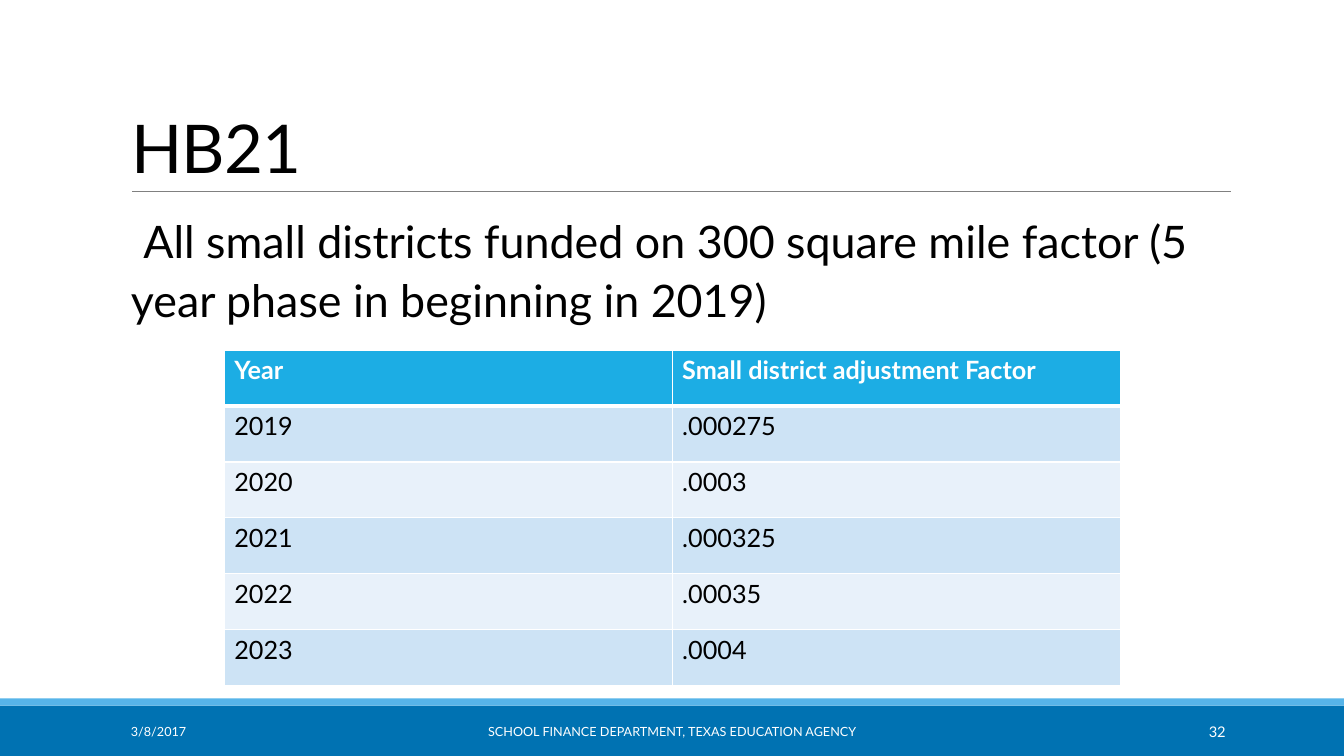
from lxml.etree import SubElement
from pptx import Presentation
from pptx.dml.color import RGBColor
from pptx.enum.shapes import MSO_CONNECTOR, MSO_SHAPE
from pptx.enum.text import MSO_ANCHOR, PP_ALIGN
from pptx.oxml.ns import qn
from pptx.util import Cm, Pt

# Content
TITLE = "HB21"
STATEMENT = ("All small districts funded on 300 square mile factor "
             "(5 year phase in beginning in 2019)")
FACTORS = [
    ("Year", "Small district adjustment Factor"),
    ("2019", ".000275"),
    ("2020", ".0003"),
    ("2021", ".000325"),
    ("2022", ".00035"),
    ("2023", ".0004"),
]
# text, left, width, size, alignment
FOOTERS = [
    ("3/8/2017", 3.05, 6.86, 9, PP_ALIGN.LEFT),
    ("SCHOOL FINANCE DEPARTMENT, TEXAS EDUCATION AGENCY", 10.24, 13.39, 9, PP_ALIGN.CENTER),
    ("32", 27.51, 3.63, 10.5, PP_ALIGN.RIGHT),
]
COLORS = {
    "text": "000000", "white": "FFFFFF", "bar": "0072B2", "strip": "56B4E9",
    "rule": "808080", "header": "1CADE4", "odd": "CDE3F5", "even": "E8F1FA",
}
FONT = "Lato"
SLIDE_WIDTH, SLIDE_HEIGHT = 33.87, 19.05
BAR_TOP, STRIP_HEIGHT = 17.78, 0.18
TEXT_LEFT, TEXT_WIDTH = 3.05, 27.94
TABLE_LEFT, TABLE_TOP, COLUMN_WIDTH, ROW_HEIGHT = 5.65, 8.82, 11.29, 1.41


def color(name):
    return RGBColor.from_string(COLORS[name])


def format_text(paragraph, size, color_name, bold=False):
    for run in paragraph.runs:
        run.font.name = FONT
        run.font.size = Pt(size)
        run.font.bold = bold
        run.font.color.rgb = color(color_name)


def add_text(slide, text, left, top, width, height, size, color_name):
    box = slide.shapes.add_textbox(Cm(left), Cm(top), Cm(width), Cm(height))
    box.text_frame.word_wrap = True
    box.text_frame.text = text
    format_text(box.text_frame.paragraphs[0], size, color_name)
    return box.text_frame


def add_band(slide, top, height, color_name):
    band = slide.shapes.add_shape(MSO_SHAPE.RECTANGLE, 0, Cm(top), Cm(SLIDE_WIDTH), Cm(height))
    band.shadow.inherit = False
    band.fill.solid()
    band.fill.fore_color.rgb = color(color_name)
    band.line.fill.background()


def set_borders(cell, bottom_width):
    properties = cell._tc.get_or_add_tcPr()
    for side, width in (("L", 1), ("R", 1), ("T", 1), ("B", bottom_width)):
        line = SubElement(properties, qn(f"a:ln{side}"), w=str(Pt(width)))
        fill = SubElement(line, qn("a:solidFill"))
        SubElement(fill, qn("a:srgbClr"), val=COLORS["white"])


def add_factor_table(slide):
    rows, columns = len(FACTORS), len(FACTORS[0])
    table = slide.shapes.add_table(
        rows, columns, Cm(TABLE_LEFT), Cm(TABLE_TOP),
        Cm(columns * COLUMN_WIDTH), Cm(rows * ROW_HEIGHT)).table
    for column in table.columns:
        column.width = Cm(COLUMN_WIDTH)
    for r, values in enumerate(FACTORS):
        table.rows[r].height = Cm(ROW_HEIGHT)
        is_header = r == 0
        fill_name = "header" if is_header else "odd" if r % 2 else "even"
        for c, value in enumerate(values):
            cell = table.cell(r, c)
            cell.text = value
            format_text(cell.text_frame.paragraphs[0], 18,
                        "white" if is_header else "text", is_header)
            set_borders(cell, 3 if is_header else 1)
            cell.fill.solid()
            cell.fill.fore_color.rgb = color(fill_name)


def main():
    presentation = Presentation()
    presentation.slide_width = Cm(SLIDE_WIDTH)
    presentation.slide_height = Cm(SLIDE_HEIGHT)
    slide = presentation.slides.add_slide(presentation.slide_layouts[5])

    # Footer bands and title rule
    add_band(slide, BAR_TOP, SLIDE_HEIGHT - BAR_TOP, "bar")
    add_band(slide, BAR_TOP - STRIP_HEIGHT, STRIP_HEIGHT, "strip")
    rule = slide.shapes.add_connector(
        MSO_CONNECTOR.STRAIGHT, Cm(3.33), Cm(4.83), Cm(31.01), Cm(4.83))
    rule.line.color.rgb = color("rule")
    rule.line.width = Pt(0.5)
    SubElement(rule._element.spPr, qn("a:effectLst"))

    # Title
    title = slide.shapes.title
    title.left, title.top = Cm(TEXT_LEFT), Cm(0.79)
    title.width, title.height = Cm(TEXT_WIDTH), Cm(4.04)
    title.text_frame.text = TITLE
    title.text_frame.vertical_anchor = MSO_ANCHOR.BOTTOM
    paragraph = title.text_frame.paragraphs[0]
    paragraph.alignment = PP_ALIGN.LEFT
    paragraph.line_spacing = 1.1
    format_text(paragraph, 48, "text")
    paragraph.runs[0].font._element.set("spc", "-50")

    # Statement with a blank bullet
    frame = add_text(slide, STATEMENT, TEXT_LEFT, 5.13, TEXT_WIDTH, 12.24, 32, "text")
    frame.margin_left = frame.margin_right = 0
    paragraph = frame.paragraphs[0]
    properties = paragraph._p.get_or_add_pPr()
    properties.set("marL", str(Cm(0.25)))
    properties.set("indent", str(-Cm(0.25)))
    SubElement(properties, qn("a:buChar"), char=" ")
    paragraph.line_spacing = 1.1
    paragraph.space_after = Pt(2)

    add_factor_table(slide)

    # Footer texts
    for text, left, width, size, alignment in FOOTERS:
        frame = add_text(slide, text, left, 17.93, width, 1.02, size, "white")
        frame.vertical_anchor = MSO_ANCHOR.MIDDLE
        frame.paragraphs[0].alignment = alignment

    presentation.save("out.pptx")


if __name__ == "__main__":
    main()
